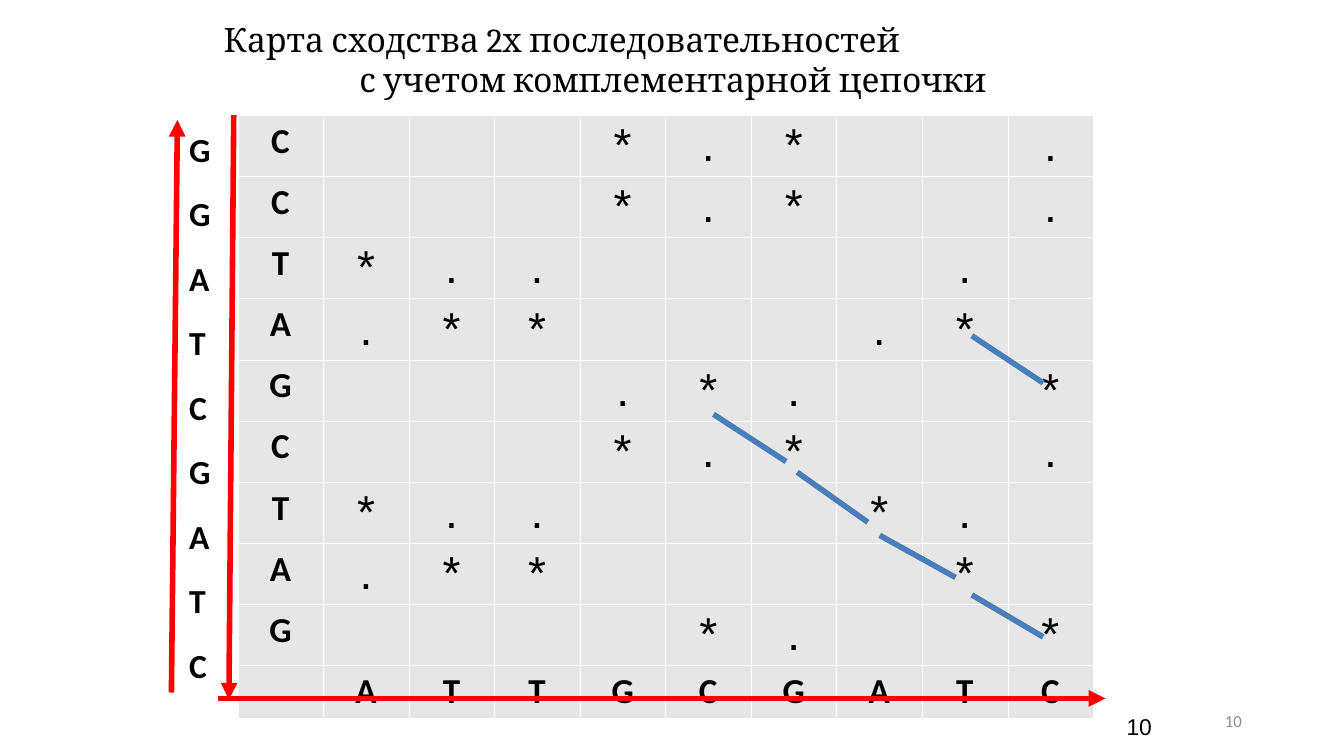
from lxml.etree import SubElement
from pptx import Presentation
from pptx.dml.color import RGBColor
from pptx.enum.shapes import MSO_CONNECTOR as Connector
from pptx.enum.text import MSO_ANCHOR as Anchor, MSO_AUTO_SIZE as AutoSize, PP_ALIGN as Align
from pptx.oxml.ns import qn
from pptx.util import Cm, Pt

COLORS = {"text": "000000", "muted": "8C8C8C", "cell": "E6E6E6",
          "border": "FFFFFF", "axis": "FF0000", "match": "4A7EBB"}

SIMILARITY_ROWS = [
    "C   *.*  .",
    "C   *.*  .",
    "T*..    . ",
    "A.**   .* ",
    "G   .*.  *",
    "C   *.*  .",
    "T*..   *. ",
    "A.**    * ",
    "G    *.  *",
    " ATTGCGATC",
]
COMPLEMENT = "GGATCGATC"
MATCHES = [
    (17.98, 10.44, 19.81, 11.63),
    (20.09, 11.9, 21.87, 13.16),
    (22.17, 13.49, 24.08, 14.55),
    (24.49, 14.99, 26.29, 16.05),
    (24.49, 8.46, 26.29, 9.65),
]
AXES = [
    (5.49, 17.6, 27.86, 17.6),
    (5.89, 2.9, 5.77, 17.63),
    (4.32, 17.45, 4.47, 3.02),
]


class SlideBuilder:
    """Holds the style and the current slide and adds elements to it."""

    def __init__(self, deck):
        self.page = deck.slides.add_slide(deck.slide_layouts[5])

    def color(self, name):
        return RGBColor.from_string(COLORS[name])

    def format_runs(self, para, size, font, color="text", bold=False):
        for span in para.runs:
            span.font.size = Pt(size)
            span.font.name = font
            span.font.bold = bold
            span.font.color.rgb = self.color(color)

    def place(self, box, left, top, width, height):
        box.left, box.top, box.width, box.height = map(Cm, (left, top, width, height))

    def title(self, lines, bounds):
        box = self.page.shapes.title
        self.place(box, *bounds)
        frame = box.text_frame
        frame.text = "\n".join(lines)
        frame.auto_size = AutoSize.NONE
        frame.vertical_anchor = Anchor.MIDDLE
        for para, align in zip(frame.paragraphs, (Align.LEFT, Align.CENTER)):
            para.alignment = align
            self.format_runs(para, 24, "Cambria")

    def text(self, content, bounds, size, font, color="text", bold=False,
             align=Align.LEFT, anchor=Anchor.TOP, wrap=True, spacing=1.0):
        box = self.page.shapes.add_textbox(*map(Cm, bounds))
        frame = box.text_frame
        frame.word_wrap = wrap
        frame.vertical_anchor = anchor
        frame.text = content
        for para in frame.paragraphs:
            para.alignment = align
            para.line_spacing = spacing
            self.format_runs(para, size, font, color, bold)

    def line(self, ends, color, arrow=False):
        line = self.page.shapes.add_connector(Connector.STRAIGHT, *map(Cm, ends))
        line.line.color.rgb = self.color(color)
        line.line.width = Pt(4)
        if arrow:
            SubElement(line.line._get_or_add_ln(), qn("a:tailEnd"), type="triangle")
        SubElement(line._element.spPr, qn("a:effectLst"))

    def cell(self, cell, mark):
        cell.margin_left = cell.margin_right = Cm(0.23)
        cell.margin_top = cell.margin_bottom = Cm(0.12)
        props = cell._tc.get_or_add_tcPr()
        for side in ("lnL", "lnR", "lnT", "lnB"):
            edge = SubElement(props, qn(f"a:{side}"), w="762")
            fill = SubElement(edge, qn("a:solidFill"))
            SubElement(fill, qn("a:srgbClr"), val=COLORS["border"])
        cell.fill.solid()
        cell.fill.fore_color.rgb = self.color("cell")
        cell.text_frame.text = mark.strip()
        para = cell.text_frame.paragraphs[0]
        para.alignment = Align.CENTER
        if mark.isalpha():
            self.format_runs(para, 25, "Calibri", bold=True)
        else:
            self.format_runs(para, 33, "Arial")

    def table(self, rows, left, top, width, row_height, last_height):
        height = row_height * (len(rows) - 1) + last_height
        table = self.page.shapes.add_table(
            len(rows), len(rows[0]), Cm(left), Cm(top), Cm(width), Cm(height)).table
        table.first_row = table.horz_banding = False
        for row, marks in enumerate(rows):
            table.rows[row].height = Cm(last_height if row == len(rows) - 1 else row_height)
            for column, mark in enumerate(marks):
                self.cell(table.cell(row, column), mark)


def main():
    deck = Presentation()
    deck.slide_width, deck.slide_height = Cm(33.87), Cm(19.05)
    page = SlideBuilder(deck)
    page.title(["Карта сходства 2х последовательностей",
                "с учетом комплементарной цепочки"], (5.38, 0.36, 23.16, 2.24))
    page.table(SIMILARITY_ROWS, 5.99, 2.9, 21.56, 1.35, 1.09)
    page.text("10", (28.14, 17.83, 1.37, 1.09), 16.3, "Arial")
    page.text("10", (23.93, 17.65, 7.62, 1.02), 12, "Calibri", "muted",
              align=Align.RIGHT, anchor=Anchor.MIDDLE)
    for ends in MATCHES:
        page.line(ends, "match")
    for ends in AXES:
        page.line(ends, "axis", arrow=True)
    page.text("\n".join(COMPLEMENT), (4.52, 2.51, 1.07, 14.83), 24, "Calibri",
              bold=True, wrap=False, spacing=1.6)
    deck.save("out.pptx")


if __name__ == "__main__":
    main()
